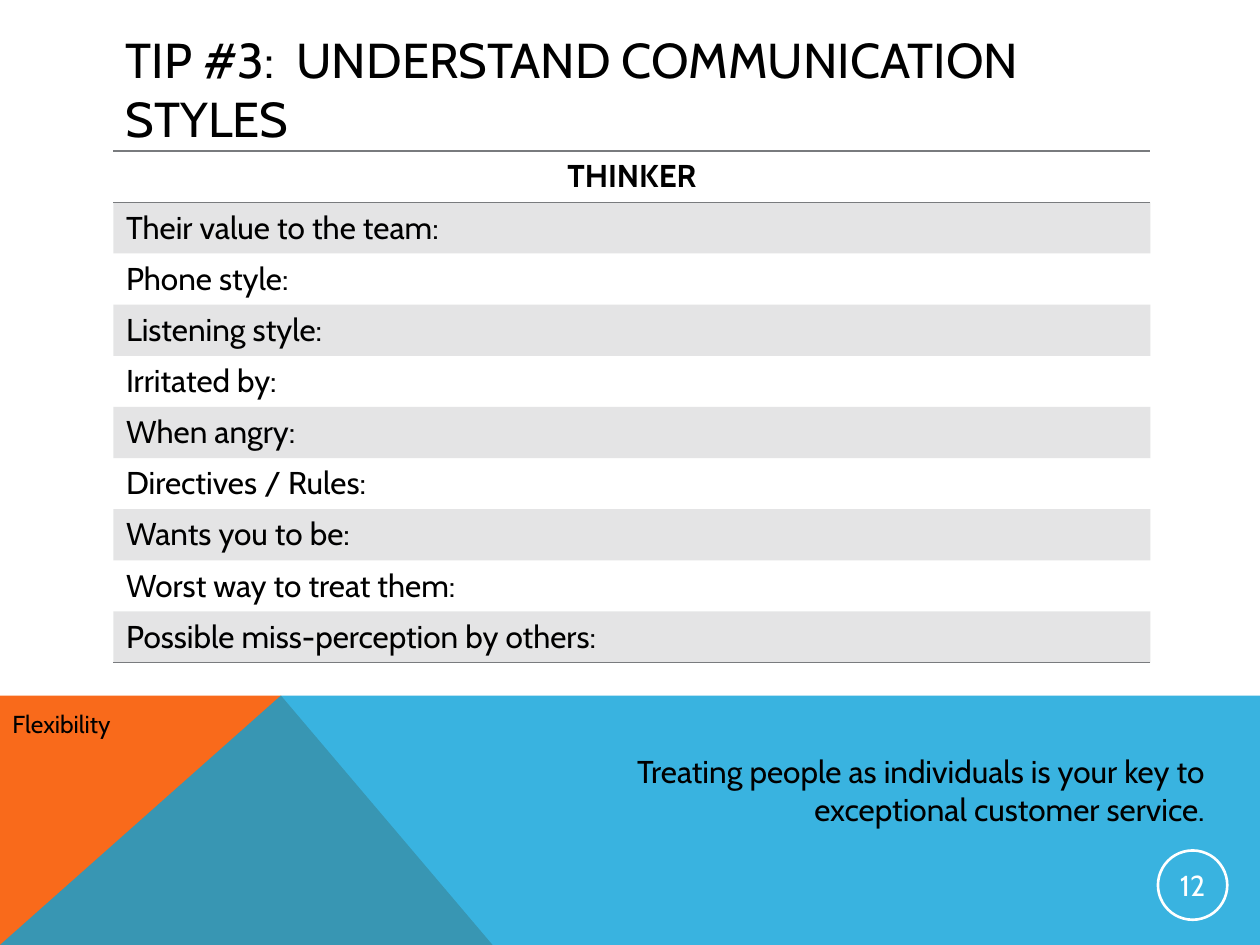
from lxml.etree import SubElement
from pptx import Presentation
from pptx.dml.color import RGBColor
from pptx.enum.shapes import MSO_SHAPE as Shape
from pptx.enum.text import MSO_ANCHOR as Anchor, PP_ALIGN as Align
from pptx.oxml.ns import qn
from pptx.util import Inches, Pt

BLACK = RGBColor(0x00, 0x00, 0x00)
WHITE = RGBColor(0xFF, 0xFF, 0xFF)
ORANGE = RGBColor(0xF9, 0x6A, 0x1B)
BLUE = RGBColor(0x08, 0xA1, 0xD9)
GRAY = RGBColor(0x79, 0x7B, 0x7E)

TOPICS = [
    "Their value to the team:",
    "Phone style:",
    "Listening style:",
    "Irritated by:",
    "When angry:",
    "Directives / Rules:",
    "Wants you to be:",
    "Worst way to treat them:",
    "Possible miss-perception by others:",
]


def write(frame, text, size, color=BLACK, bold=False, align=Align.LEFT):
    paragraph = frame.paragraphs[0]
    paragraph.alignment = align
    run = paragraph.add_run()
    run.text = text
    run.font.color.rgb = color
    for name, value in {"name": "Cabin", "size": Pt(size), "bold": bold}.items():
        setattr(run.font, name, value)


def paint(fill, color, opacity=100):
    fill.solid()
    fill.fore_color.rgb = color
    if opacity < 100:
        srgb = fill._xPr.find(qn("a:solidFill")).find(qn("a:srgbClr"))
        SubElement(srgb, qn("a:alpha"), val=str(opacity * 1000))


def add_label(slide, box, text, size, align=Align.LEFT, anchor=Anchor.TOP):
    frame = slide.shapes.add_textbox(*map(Inches, box)).text_frame
    for name, value in {"word_wrap": True, "vertical_anchor": anchor}.items():
        setattr(frame, name, value)
    write(frame, text, size, align=align)


def add_panel(slide, corners, color, opacity=100):
    points = [(Inches(x), Inches(y)) for x, y in corners]
    builder = slide.shapes.build_freeform(*points[0])
    builder.add_line_segments(points[1:], close=True)
    panel = builder.convert_to_shape()
    panel.shadow.inherit = False
    panel.line.fill.background()
    paint(panel.fill, color, opacity)


def add_footer_band(slide, left, top, width, height):
    right, bottom, peak = left + width, top + height, left + 2.23
    add_panel(slide, [(left, bottom), (left, top), (peak, top),
                      (left + 3.91, bottom)], ORANGE)
    add_panel(slide, [(left, bottom), (peak, top), (right, top),
                      (right, bottom)], BLUE, 80)


def add_page_badge(slide, left, top, size, number):
    badge = slide.shapes.add_shape(
        Shape.OVAL, *map(Inches, (left, top, size, size)))
    badge.shadow.inherit = False
    badge.fill.background()
    badge.line.color.rgb = WHITE
    badge.line.width = Pt(1.5)
    frame = badge.text_frame
    frame.vertical_anchor = Anchor.MIDDLE
    for side in ("left", "top", "right", "bottom"):
        setattr(frame, f"margin_{side}", Inches(0.01))
    write(frame, number, 16.5, WHITE, align=Align.CENTER)


def set_borders(cell, ruled):
    properties = cell._tc.get_or_add_tcPr()
    for side in "LRTB":
        border = SubElement(properties, qn(f"a:ln{side}"), w=str(Pt(1)))
        if side in ruled:
            solid = SubElement(border, qn("a:solidFill"))
            SubElement(solid, qn("a:srgbClr"), val=str(GRAY))
        else:
            SubElement(border, qn("a:noFill"))


def add_style_table(slide, left, top, width, height, heading, topics):
    count = len(topics) + 1
    table = slide.shapes.add_table(
        count, 1, *map(Inches, (left, top, width, height))).table
    table.first_row = table.horz_banding = False
    # Rules above and below the heading, and under the last row
    ruled = {0: "TB", 1: "T", count - 1: "B"}
    for row, text in enumerate([heading, *topics]):
        cell = table.cell(row, 0)
        set_borders(cell, ruled.get(row, ""))
        if row % 2:
            paint(cell.fill, GRAY, 20)
        else:
            cell.fill.background()
        is_heading = row == 0
        write(cell.text_frame, text, 18, bold=is_heading,
              align=Align.CENTER if is_heading else Align.LEFT)


def main():
    deck = Presentation()
    deck.slide_width, deck.slide_height = Inches(10), Inches(7.5)
    slide = deck.slides.add_slide(deck.slide_layouts[6])

    # Background band and title
    add_footer_band(slide, 0, 5.52, 10, 1.98)
    add_label(slide, (0.9, 0.4, 8.43, 0.6),
              "TIP #3:  UNDERSTAND COMMUNICATION STYLES", 28,
              anchor=Anchor.MIDDLE)

    # Footer contents
    add_page_badge(slide, 9.19, 6.75, 0.55, "12")
    add_label(slide, (0, 5.58, 1.5, 0.34), "Flexibility", 14)
    add_label(slide, (4.83, 5.92, 4.83, 0.71),
              "Treating people as individuals is your key to "
              "exceptional customer service.", 18, Align.RIGHT)

    # Communication style table
    add_style_table(slide, 0.9, 1.2, 8.23, 4.06, "THINKER", TOPICS)

    deck.save("out.pptx")


if __name__ == "__main__":
    main()
